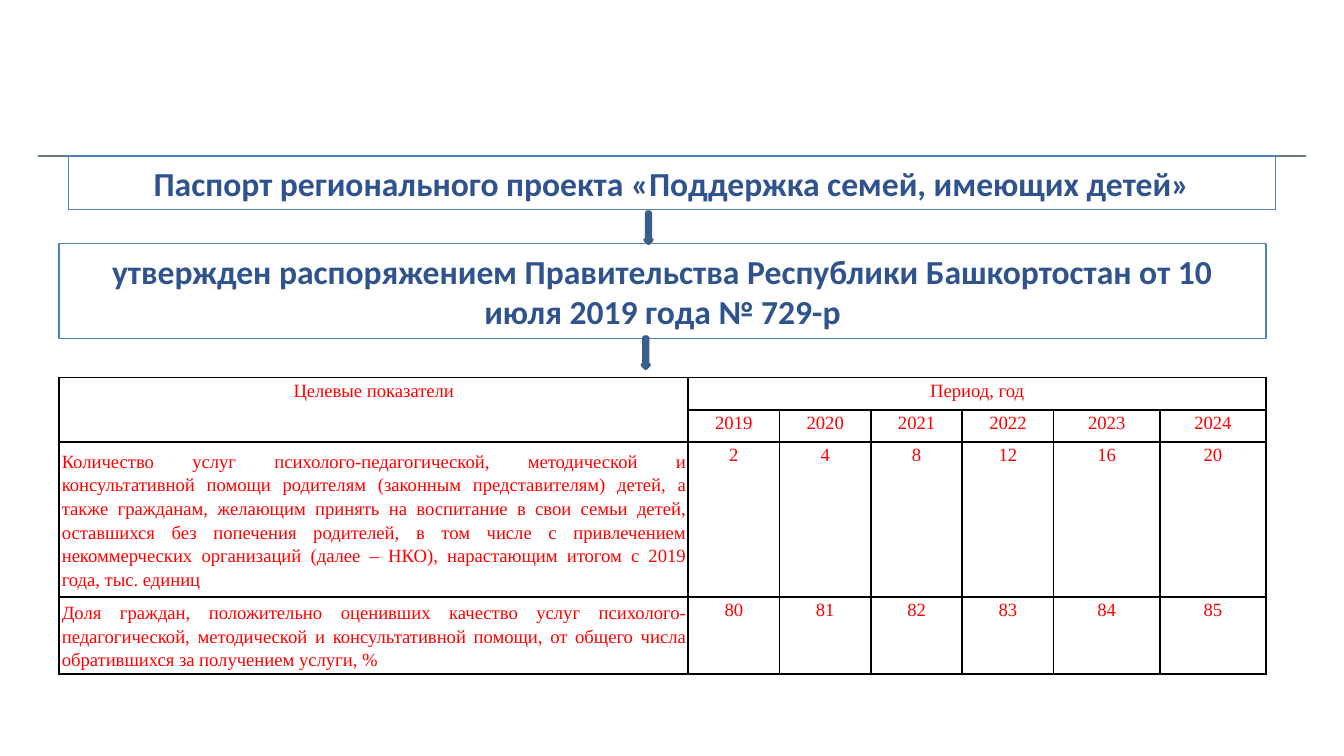
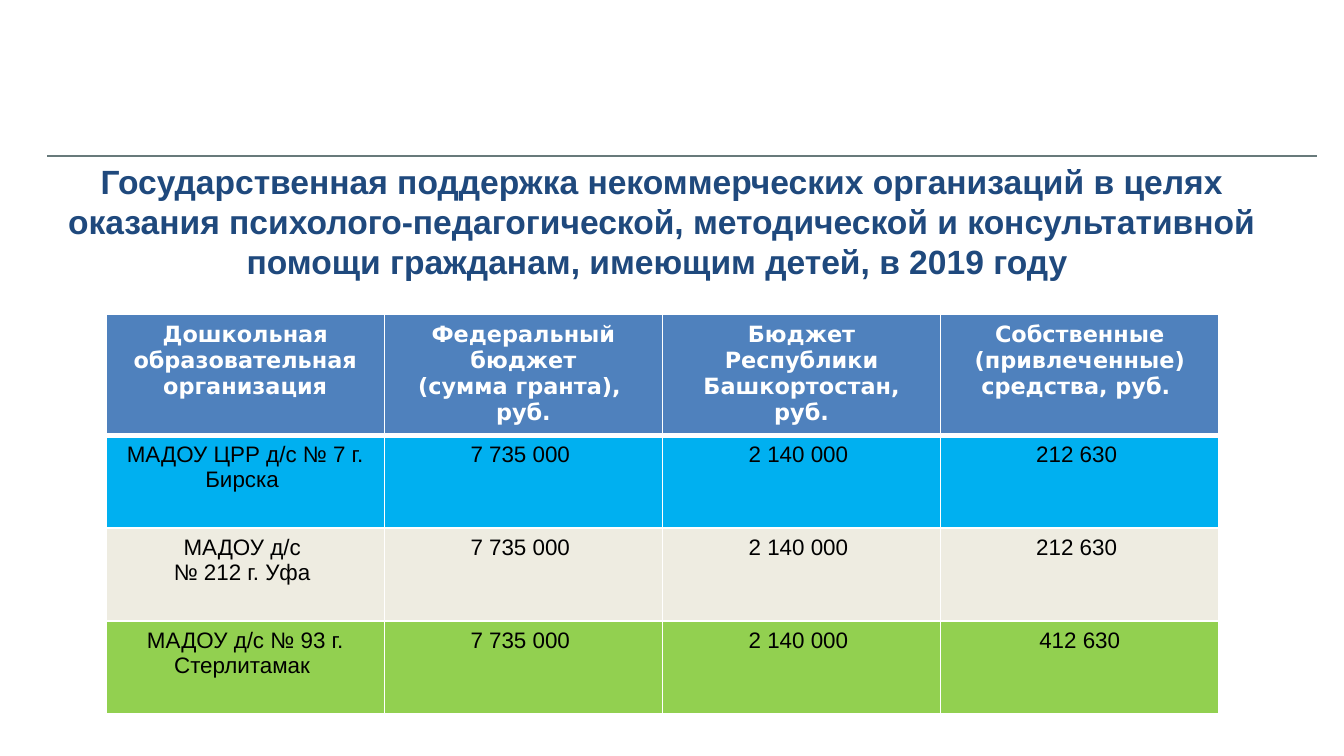
from lxml import etree
from pptx import Presentation
from pptx.dml.color import RGBColor
from pptx.enum.shapes import MSO_CONNECTOR, MSO_SHAPE
from pptx.enum.text import MSO_ANCHOR, MSO_AUTO_SIZE, PP_ALIGN
from pptx.oxml.ns import qn
from pptx.util import Inches, Pt

RECT, DOWN_ARROW = MSO_SHAPE.RECTANGLE, MSO_SHAPE.DOWN_ARROW
STRAIGHT = MSO_CONNECTOR.STRAIGHT
TOP, MIDDLE = MSO_ANCHOR.TOP, MSO_ANCHOR.MIDDLE
CENTER, JUSTIFY = PP_ALIGN.CENTER, PP_ALIGN.JUSTIFY
GROW = MSO_AUTO_SIZE.SHAPE_TO_FIT_TEXT


class Theme:
    rule, accent, arrow_line = "687A7B", "4F81BD", "3A5F8C"
    grid, white = "000000", "FFFFFF"
    rows = ("00B0F0", "EEECE1", "92D050")
    # Font styles: name, size, colour, bold
    box = ("Calibri", 18, "2F538E", True)
    title = ("Arial", 18, "1F497D", True)
    targets = ("Times New Roman", 10, "FF0000", False)
    grant_head = ("DejaVu Sans", 12, white, True)
    grant_body = ("Arial", 12, "000000", False)


# Content
PASSPORT = [  # text, left, top, height
    ("Паспорт регионального проекта «Поддержка семей, имеющих детей»",
     0.51, 1.16, 0.4),
    ("утвержден распоряжением Правительства Республики Башкортостан "
     "от 10 июля 2019 года № 729-р", 0.44, 1.81, 0.71),
]
ARROWS = [(4.8, 1.58), (4.78, 2.51)]
TARGET_HEAD = ("Целевые показатели", "Период, год")
YEARS = range(2019, 2025)
TARGETS = [
    ("Количество услуг психолого-педагогической, методической и "
     "консультативной помощи родителям (законным представителям) детей, "
     "а также гражданам, желающим принять на воспитание в свои семьи детей, "
     "оставшихся без попечения родителей, в том числе с привлечением "
     "некоммерческих организаций (далее – НКО), нарастающим итогом "
     "с 2019 года, тыс. единиц", (2, 4, 8, 12, 16, 20)),
    ("Доля граждан, положительно оценивших качество услуг "
     "психолого-педагогической, методической и консультативной помощи, "
     "от общего числа обратившихся за получением услуги, %",
     (80, 81, 82, 83, 84, 85)),
]
SUPPORT_TITLE = (
    "Государственная поддержка некоммерческих организаций в целях оказания "
    "психолого-педагогической, методической и консультативной помощи "
    "гражданам, имеющим детей, в 2019 году ")
GRANTS = [
    ("Дошкольная образовательная организация",
     "Федеральный бюджет\v(сумма гранта), \nруб.",
     "Бюджет Республики Башкортостан, руб.",
     "Собственные (привлеченные) средства, руб. "),
    ("МАДОУ ЦРР д/с № 7 г. Бирска ", "7 735 000 ", "2 140 000 ", "212 630 "),
    ("МАДОУ д/с \n№ 212 г. Уфа ", "7 735 000 ", "2 140 000 ", "212 630 "),
    ("МАДОУ д/с № 93 г. Стерлитамак ", "7 735 000 ", "2 140 000 ", "412 630"),
]


def rgb(color):
    return RGBColor.from_string(color)


def write(tf, text, style, align=CENTER, spacing=None):
    tf.text = text
    name, size, color, bold = style
    for p in tf.paragraphs:
        p.alignment = align
        if spacing:
            p.line_spacing = spacing
        p.font.name, p.font.size, p.font.bold = name, Pt(size), bold
        p.font.color.rgb = rgb(color)


def add_rule(s, left, right):
    line = s.shapes.add_connector(STRAIGHT, Inches(left), Inches(1.16),
                                  Inches(right), Inches(1.16))
    line.line.color.rgb = rgb(Theme.rule)
    line.line.width = Pt(0.75)
    etree.SubElement(line._element.spPr, qn("a:effectLst"))


def add_shape(s, kind, box, line, width, fill=None):
    sp = s.shapes.add_shape(kind, *map(Inches, box))
    sp.shadow.inherit = False
    if fill:
        sp.fill.solid()
        sp.fill.fore_color.rgb = rgb(fill)
    else:
        sp.fill.background()
    sp.line.color.rgb = rgb(line)
    sp.line.width = Pt(width)
    return sp


def add_grid(s, left, top, cols, rows):
    tbl = s.shapes.add_table(len(rows), len(cols), Inches(left), Inches(top),
                             Inches(sum(cols)), Inches(sum(rows))).table
    tbl.first_row = tbl.horz_banding = False
    for column, width in zip(tbl.columns, cols):
        column.width = Inches(width)
    for row, height in zip(tbl.rows, rows):
        row.height = Inches(height)
    return tbl


def set_borders(cell, color, top=1, bottom=1):
    tc_pr = cell._tc.get_or_add_tcPr()
    for side, width in (("L", 1), ("R", 1), ("T", top), ("B", bottom)):
        ln = etree.SubElement(tc_pr, qn("a:ln" + side), w=str(Pt(width)))
        fill = etree.SubElement(ln, qn("a:solidFill"))
        etree.SubElement(fill, qn("a:srgbClr"), val=color)


def passport_slide(s):
    add_rule(s, 0.28, 9.72)
    for text, left, top, height in PASSPORT:
        sp = add_shape(s, RECT, (left, top, 8.98, height), Theme.accent, 0.75)
        write(sp.text_frame, text, Theme.box)
        sp.text_frame.auto_size = GROW
    for left, top in ARROWS:
        add_shape(s, DOWN_ARROW, (left, top, 0.05, 0.23),
                  Theme.arrow_line, 2, Theme.accent)

    # Target indicators by year
    blanks = [""] * (len(YEARS) - 1)
    grid = [[*TARGET_HEAD, *blanks], ["", *YEARS]]
    grid += [[name, *values] for name, values in TARGETS]
    tbl = add_grid(s, 0.44, 2.81, [4.68] + [0.68] * 4 + [0.79] * 2,
                   [0.24, 0.24, 1.15, 0.57])
    for i, row in enumerate(grid):
        for j, value in enumerate(row):
            cell = tbl.cell(i, j)
            is_name = i > 1 and j == 0
            write(cell.text_frame, str(value), Theme.targets,
                  JUSTIFY if is_name else CENTER, 1.15)
            cell.vertical_anchor = MIDDLE if is_name else TOP
            cell.margin_left = cell.margin_right = Inches(0.02)
            cell.margin_top = cell.margin_bottom = 0
            set_borders(cell, Theme.grid)
            cell.fill.background()
    tbl.cell(0, 0).merge(tbl.cell(1, 0))
    tbl.cell(0, 1).merge(tbl.cell(0, len(YEARS)))


def support_slide(s):
    add_rule(s, 0.35, 9.8)
    title = s.shapes.add_textbox(*map(Inches, (0.2, 1.13, 9.45, 1.03)))
    tf = title.text_frame
    tf.word_wrap = True
    tf.auto_size = GROW
    tf.vertical_anchor = MIDDLE
    tf.margin_left = tf.margin_right = Inches(0.12)
    tf.margin_top = tf.margin_bottom = Inches(0.06)
    write(tf, SUPPORT_TITLE, Theme.title)

    # Grants by organisation
    tbl = add_grid(s, 0.79, 2.34, [2.07] * 4, [0.87] + [0.69] * 3)
    fills = (Theme.accent, *Theme.rows)
    for i, (row, color) in enumerate(zip(GRANTS, fills)):
        style = Theme.grant_body if i else Theme.grant_head
        for j, text in enumerate(row):
            cell = tbl.cell(i, j)
            write(cell.text_frame, text, style)
            set_borders(cell, Theme.white, top=3 if i == 1 else 1,
                        bottom=1 if i else 3)
            cell.fill.solid()
            cell.fill.fore_color.rgb = rgb(color)


def main():
    prs = Presentation()
    prs.slide_width = Inches(10)
    prs.slide_height = prs.slide_width * 9 // 16
    for build in (passport_slide, support_slide):
        build(prs.slides.add_slide(prs.slide_layouts[6]))
    prs.save("out.pptx")


if __name__ == "__main__":
    main()
